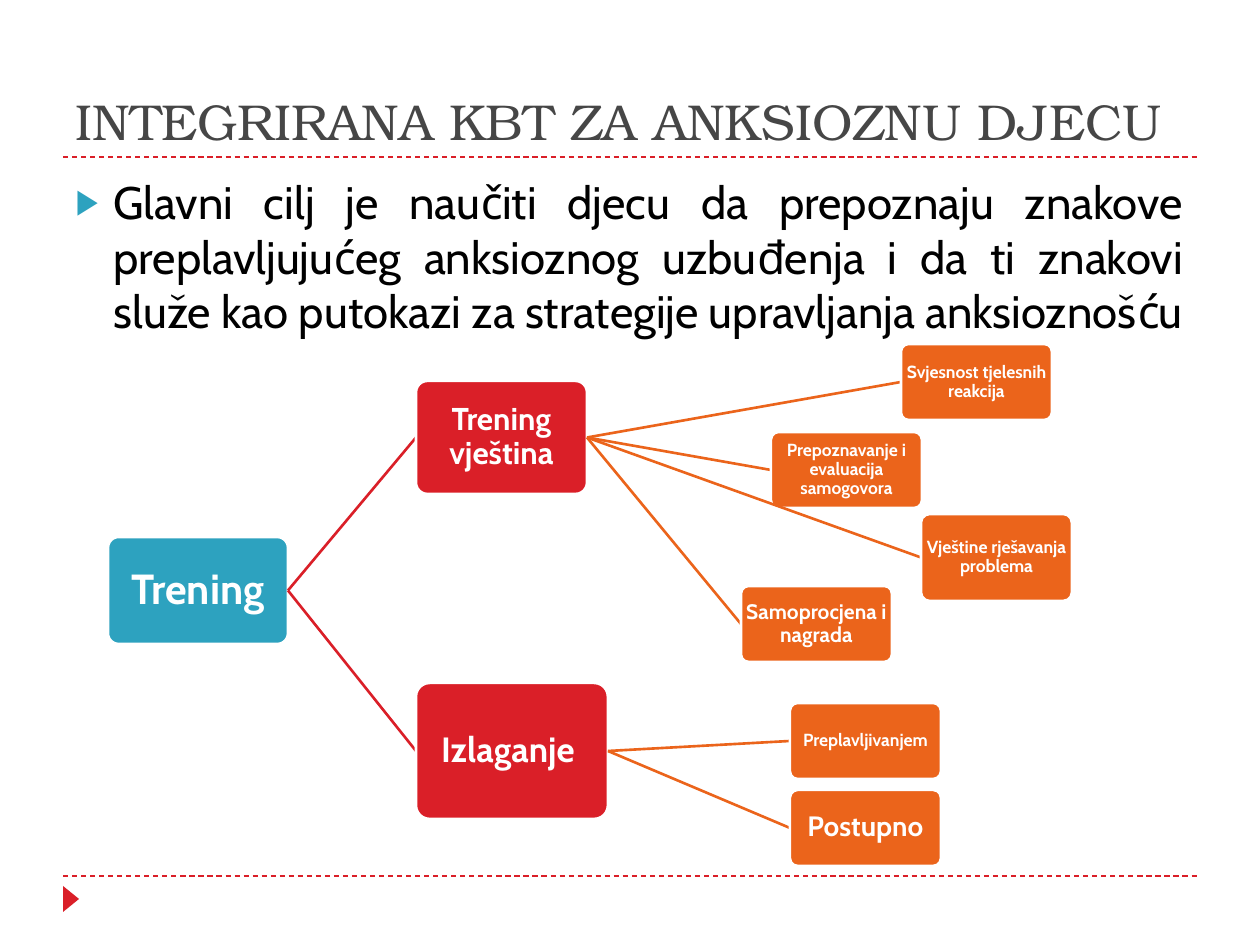
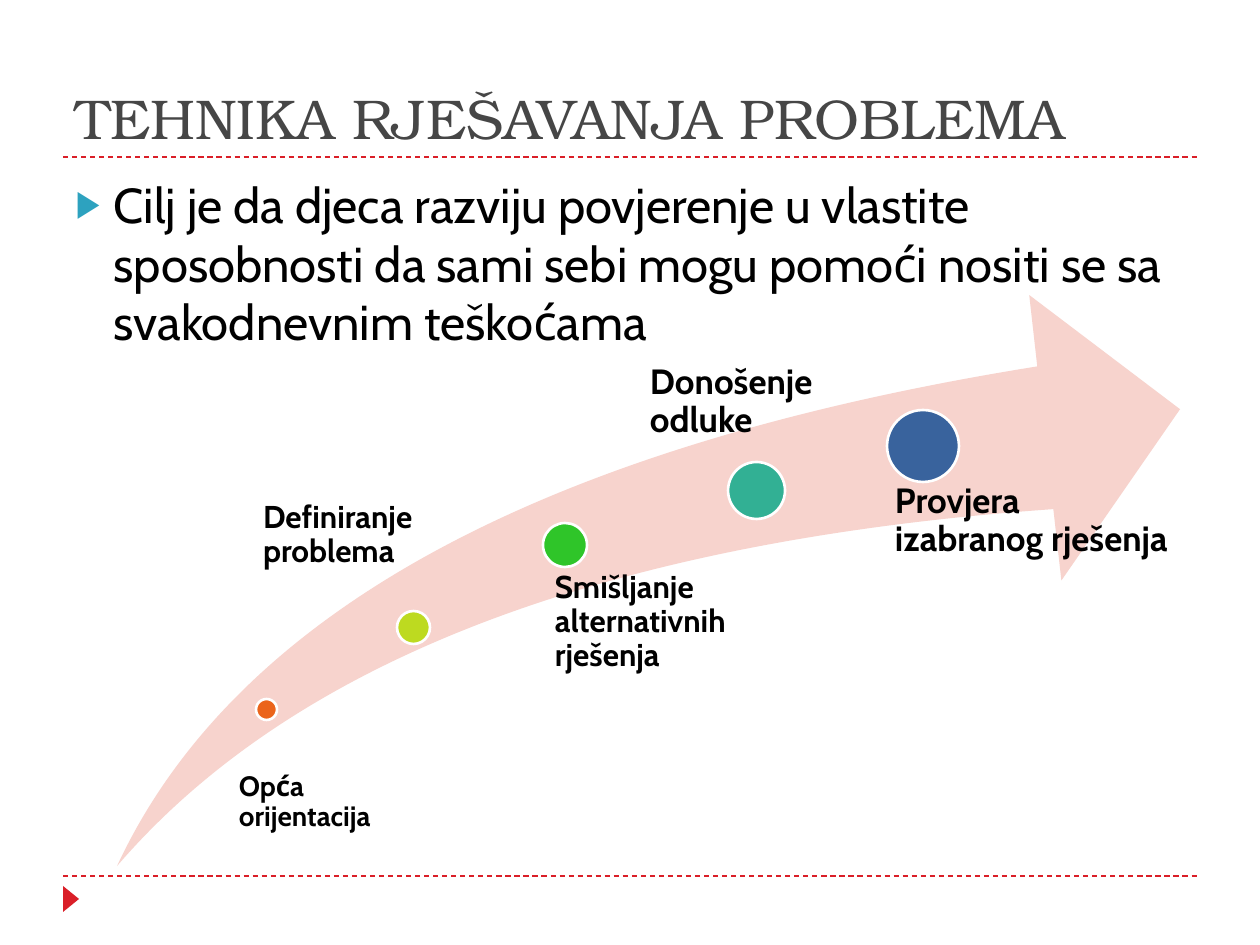
import pptx
import pptx.dml.color
import pptx.enum.dml
import pptx.enum.shapes
import pptx.enum.text
import pptx.oxml.ns
import pptx.util
from lxml import etree

PX = 914400 / 126  # EMU in one px
SLIDE_SIZE = (1260, 945)
SHAPE = pptx.enum.shapes.MSO_SHAPE
ALIGN = pptx.enum.text.PP_ALIGN
ANCHOR = pptx.enum.text.MSO_ANCHOR

WHITE, BLACK, GREY = "FFFFFF", "000000", "464646"
RED, BLUE, ORANGE = "DA1F28", "2DA2BF", "EB641B"
PALE_RED = "F7D3CD"


def emu(*lengths):
    return [pptx.util.Emu(round(length * PX)) for length in lengths]


def rgb(hex_string):
    return pptx.dml.color.RGBColor.from_string(hex_string)


def set_values(target, values):
    for name, value in values.items():
        setattr(target, name, value)


def add_xml(parent, tag, **attributes):
    return etree.SubElement(parent, pptx.oxml.ns.qn(tag), attributes)


class Deck:
    title_font = "TeX Gyre Bonum"
    text_font = "Cabin"
    rules_y = (157, 876)
    margin = 63

    def __init__(self):
        self.file = pptx.Presentation()
        width, height = emu(*SLIDE_SIZE)
        set_values(self.file, {"slide_width": width, "slide_height": height})
        self.slide = None

    def start(self, title, title_size, goal, goal_size, align=ALIGN.LEFT):
        """Add a slide with its rules, corner marker, title and goal bullet."""
        self.slide = self.file.slides.add_slide(self.file.slide_layouts[1])
        for y in self.rules_y:
            self.line((self.margin, y), (SLIDE_SIZE[0] - self.margin, y), RED, 0.75,
                      pptx.enum.dml.MSO_LINE.DASH)
        marker = self.shape(SHAPE.ISOSCELES_TRIANGLE, (58, 891, 26, 16), RED)
        marker.rotation = 90

        heading, body = self.slide.placeholders
        self.place(heading, (self.margin, 21, 1134, 136))
        self.fill_text(heading, title, title_size, GREY, font=self.title_font,
                       anchor=ANCHOR.BOTTOM)
        self.place(body, (self.margin, 168, 1134, 680))
        paragraph = self.fill_text(body, goal, goal_size, BLACK, align=align)
        paragraph.space_before = pptx.util.Pt(6)
        self.bullet(paragraph)

    def place(self, shape, box):
        set_values(shape, dict(zip(("left", "top", "width", "height"), emu(*box))))

    def bullet(self, paragraph):
        indent = emu(38)[0]
        properties = paragraph._p.get_or_add_pPr()
        properties.set("marL", str(indent))
        properties.set("indent", str(-indent))
        add_xml(add_xml(properties, "a:buClr"), "a:srgbClr", val=BLUE)
        add_xml(properties, "a:buSzPct", val="76000")
        add_xml(properties, "a:buChar", char="▶")

    def fill_text(self, shape, text, size, color, font=text_font, bold=False,
                  align=ALIGN.LEFT, anchor=ANCHOR.TOP, insets=None, spacing=None):
        """Fill a shape with one paragraph; insets are left, top, right, bottom."""
        frame = shape.text_frame
        set_values(frame, {"text": text, "word_wrap": True, "vertical_anchor": anchor,
                           "auto_size": pptx.enum.text.MSO_AUTO_SIZE.NONE})
        if insets:
            sides = ("margin_left", "margin_top", "margin_right", "margin_bottom")
            set_values(frame, dict(zip(sides, emu(*insets))))
        paragraph = frame.paragraphs[0]
        set_values(paragraph, {"alignment": align, "line_spacing": spacing})
        letters = paragraph.runs[0].font
        set_values(letters, {"name": font, "size": pptx.util.Pt(size), "bold": bold})
        letters.color.rgb = rgb(color)
        return paragraph

    def shape(self, kind, box, fill, outline=None):
        shape = self.slide.shapes.add_shape(kind, *emu(*box))
        shape.shadow.inherit = False
        shape.fill.solid()
        shape.fill.fore_color.rgb = rgb(fill)
        if outline:
            shape.line.color.rgb = rgb(outline)
            shape.line.width = pptx.util.Pt(1.5)
        else:
            shape.line.fill.background()
        return shape

    def line(self, start, end, color, width=1.5, dash=None):
        line = self.slide.shapes.add_connector(
            pptx.enum.shapes.MSO_CONNECTOR.STRAIGHT, *emu(*start, *end))
        line.line.color.rgb = rgb(color)
        set_values(line.line, {"width": pptx.util.Pt(width), "dash_style": dash})
        add_xml(line._element.spPr, "a:effectLst")

    def label(self, box, text, size, inset):
        label = self.slide.shapes.add_textbox(*emu(*box))
        self.fill_text(label, text, size, BLACK, bold=True, insets=(inset, 0, 0, 0),
                       spacing=0.9)

    def branch(self, node, level=0, joint=None):
        """Draw a tree node, linked to its parent's joint, then its children."""
        text, size, box, children = node
        left, top, width, height = box
        middle = top + height / 2
        color = (BLUE, RED, ORANGE)[level]
        if joint:
            self.line(joint, (left, middle), color)
        card = self.shape(SHAPE.ROUNDED_RECTANGLE, box, color, WHITE)
        card.adjustments[0] = 0.1
        self.fill_text(card, text, size, WHITE, bold=True, align=ALIGN.CENTER,
                       anchor=ANCHOR.MIDDLE, insets=(3, 3, 3, 3), spacing=0.9)
        for child in children:
            self.branch(child, level + 1, (left + width, middle))


def leaf(text, size, left, top, height=76):
    return text, size, (left, top, 151, height), []


TRAINING = ("Trening", 24, (108, 537, 180, 107), [
    ("Trening vještina", 18, (416, 381, 171, 113), [
        leaf("Svjesnost tjelesnih reakcija", 10, 901, 344),
        leaf("Prepoznavanje i evaluacija samogovora", 10, 771, 432),
        leaf("Vještine rješavanja problema", 10, 921, 514, 87),
        leaf("Samoprocjena i nagrada", 12, 741, 586),
    ]),
    ("Izlaganje ", 20, (416, 683, 192, 136), [
        leaf("Preplavljivanjem", 10, 790, 703),
        leaf("Postupno", 16, 790, 790),
    ]),
])

# dot left, top, diameter and colour; label text, size and box
STEPS = [
    (256, 699, 21, ORANGE, "Opća orijentacija", 16, (228, 772, 178, 84)),
    (397, 611, 33, "BDDA20", "Definiranje problema", 18, (246, 501, 209, 100)),
    (543, 523, 44, "2FC529", "Smišljanje alternativnih rješenja", 18,
     (532, 571, 275, 249)),
    (728, 462, 57, "32B094", "Donošenje odluke", 20, (620, 364, 244, 126)),
    (887, 410, 72, "39639D", "Provjera izabranog rješenja", 20,
     (857, 483, 316, 348)),
]


def main():
    deck = Deck()

    deck.start(
        "INTEGRIRANA KBT ZA ANKSIOZNU DJECU", 28.8,
        "Glavni cilj je naučiti djecu da prepoznaju znakove preplavljujućeg "
        "anksioznog uzbuđenja i da ti znakovi služe kao putokazi za strategije "
        "upravljanja anksioznošću", 26, ALIGN.JUSTIFY)
    deck.branch(TRAINING)

    deck.start(
        "TEHNIKA RJEŠAVANJA PROBLEMA", 32,
        "Cilj je da djeca razviju povjerenje u vlastite sposobnosti da sami sebi "
        "mogu pomoći nositi se sa svakodnevnim teškoćama", 28)
    swoosh = deck.shape(SHAPE.SWOOSH_ARROW, (117, 295, 1063, 571), PALE_RED)
    for index in range(2):
        swoosh.adjustments[index] = 0.25
    for left, top, diameter, color, text, size, box in STEPS:
        deck.shape(SHAPE.OVAL, (left, top, diameter, diameter), color, WHITE)
        deck.label(box, text, size, round(diameter * 0.53))

    deck.file.save("out.pptx")


if __name__ == "__main__":
    main()
